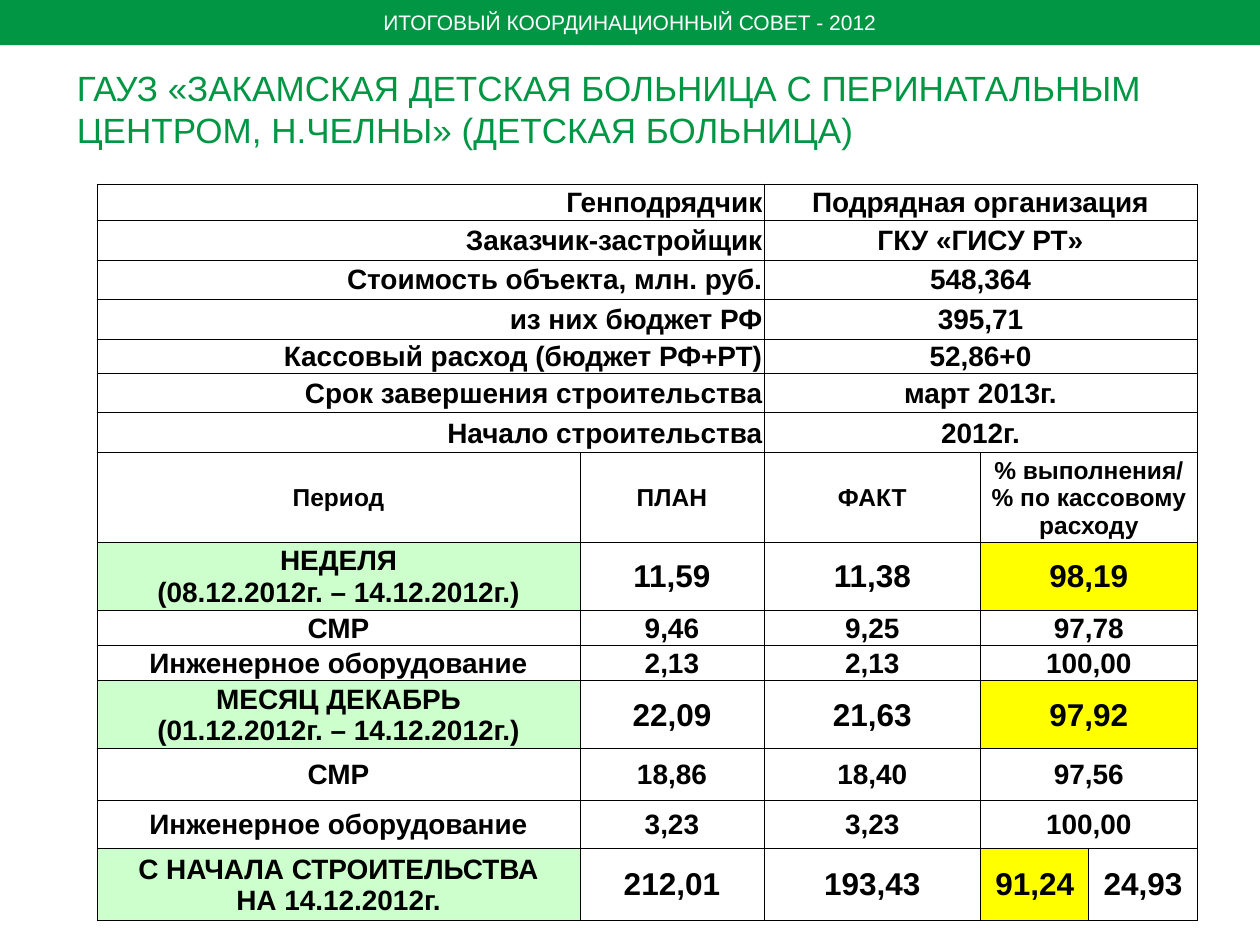
import pptx
import pptx.dml.color
import pptx.enum.shapes
import pptx.enum.text
import pptx.oxml
import pptx.oxml.ns
import pptx.util

Cm = pptx.util.Cm
Pt = pptx.util.Pt
ALIGN = pptx.enum.text.PP_ALIGN
MIDDLE = pptx.enum.text.MSO_ANCHOR.MIDDLE

COLORS = {
    "green": "009644",
    "mint": "CCFFCC",
    "yellow": "FFFF00",
    "white": "FFFFFF",
    "black": "000000",
}


def set_font(paragraph, size, color, bold=False):
    paragraph.font.name = "Arial"
    paragraph.font.size = Pt(size)
    paragraph.font.bold = bold
    paragraph.font.color.rgb = pptx.dml.color.RGBColor.from_string(COLORS[color])


def fill_cell(cell, text, size, align=ALIGN.CENTER, fill=None):
    cell.text = text
    cell.vertical_anchor = MIDDLE
    cell.margin_left = cell.margin_right = cell.margin_top = Cm(0.03)
    cell.margin_bottom = 0
    if fill:
        cell.fill.solid()
        cell.fill.fore_color.rgb = pptx.dml.color.RGBColor.from_string(COLORS[fill])
    for paragraph in cell.text_frame.paragraphs:
        paragraph.alignment = align
        set_font(paragraph, size, "black", bold=True)


presentation = pptx.Presentation()
presentation.slide_width = Cm(25.4)
presentation.slide_height = Cm(19.05)
slide = presentation.slides.add_slide(presentation.slide_layouts[6])

# Header bar
bar = slide.shapes.add_shape(
    pptx.enum.shapes.MSO_SHAPE.RECTANGLE, 0, 0, presentation.slide_width, Cm(0.91))
bar.shadow.inherit = False
bar.fill.solid()
bar.fill.fore_color.rgb = pptx.dml.color.RGBColor.from_string(COLORS["green"])
bar.line.fill.background()
bar.text_frame.word_wrap = False
bar.text_frame.vertical_anchor = MIDDLE
paragraph = bar.text_frame.paragraphs[0]
paragraph.text = "ИТОГОВЫЙ КООРДИНАЦИОННЫЙ СОВЕТ - 2012"
paragraph.alignment = ALIGN.CENTER
set_font(paragraph, 12, "white")

# Table contents
facts = [
    ("Генподрядчик", "Подрядная организация"),
    ("Заказчик-застройщик", "ГКУ «ГИСУ РТ»"),
    ("Стоимость объекта, млн. руб.", "548,364"),
    ("из них бюджет РФ", "395,71"),
    ("Кассовый расход (бюджет РФ+РТ)", "52,86+0"),
    ("Срок завершения строительства", "март 2013г."),
    ("Начало строительства", "2012г."),
]
headings = ["Период", "ПЛАН", "ФАКТ", "% выполнения/ % по кассовому расходу"]
periods = [
    ("НЕДЕЛЯ\n(08.12.2012г. – 14.12.2012г.)", "11,59", "11,38", "98,19"),
    ("СМР", "9,46", "9,25", "97,78"),
    ("Инженерное оборудование", "2,13", "2,13", "100,00"),
    ("МЕСЯЦ ДЕКАБРЬ\n(01.12.2012г. – 14.12.2012г.)", "22,09", "21,63", "97,92"),
    ("СМР", "18,86", "18,40", "97,56"),
    ("Инженерное оборудование", "3,23", "3,23", "100,00"),
    ("С НАЧАЛА СТРОИТЕЛЬСТВА\nНА 14.12.2012г.", "212,01", "193,43", "91,24", "24,93"),
]
column_widths = [9.73, 3.71, 4.37, 2.18, 2.18]
row_heights = [0.74, 0.79, 0.79, 0.81, 0.69, 0.79, 0.81, 1.8,
               1.37, 0.71, 0.71, 1.37, 1.04, 0.97, 1.45]

# Table grid
frame = slide.shapes.add_table(
    len(row_heights), len(column_widths), Cm(1.96), Cm(3.71),
    Cm(sum(column_widths)), Cm(sum(row_heights)))
table = frame.table
table.first_row = False
table.horz_banding = False
for column, width in zip(table.columns, column_widths):
    column.width = Cm(width)
for row, height in zip(table.rows, row_heights):
    row.height = Cm(height)

# Thin black borders, no fill by default
for cell in table.iter_cells():
    properties = cell._tc.get_or_add_tcPr()
    for side in ("lnL", "lnR", "lnT", "lnB"):
        properties.append(pptx.oxml.parse_xml(
            f'<a:{side} {pptx.oxml.ns.nsdecls("a")} w="6350"><a:solidFill>'
            f'<a:srgbClr val="{COLORS["black"]}"/></a:solidFill></a:{side}>'))
    cell.fill.background()

# Project facts
for row, (label, value) in enumerate(facts):
    table.cell(row, 0).merge(table.cell(row, 1))
    table.cell(row, 2).merge(table.cell(row, 4))
    fill_cell(table.cell(row, 0), label, 16, ALIGN.RIGHT)
    fill_cell(table.cell(row, 2), value, 16)

# Column headings, then plan and actual by period
for row, texts in enumerate([headings] + periods, start=len(facts)):
    is_heading = texts is headings
    is_total = "\n" in texts[0]
    if len(texts) == 4:
        table.cell(row, 3).merge(table.cell(row, 4))
    for column, text in enumerate(texts):
        size = 14 if is_heading else 18 if is_total and column else 16
        fill = {0: "mint", 3: "yellow", 4: "white"}.get(column) if is_total else None
        fill_cell(table.cell(row, column), text, size, fill=fill)

# Title
title = slide.shapes.add_textbox(Cm(1.3), Cm(1.22), Cm(22.83), Cm(2.9))
title.text_frame.word_wrap = True
paragraph = title.text_frame.paragraphs[0]
paragraph.text = ("ГАУЗ «ЗАКАМСКАЯ ДЕТСКАЯ БОЛЬНИЦА С ПЕРИНАТАЛЬНЫМ "
                  "ЦЕНТРОМ, Н.ЧЕЛНЫ» (ДЕТСКАЯ БОЛЬНИЦА)")
set_font(paragraph, 20, "green")

presentation.save("out.pptx")
